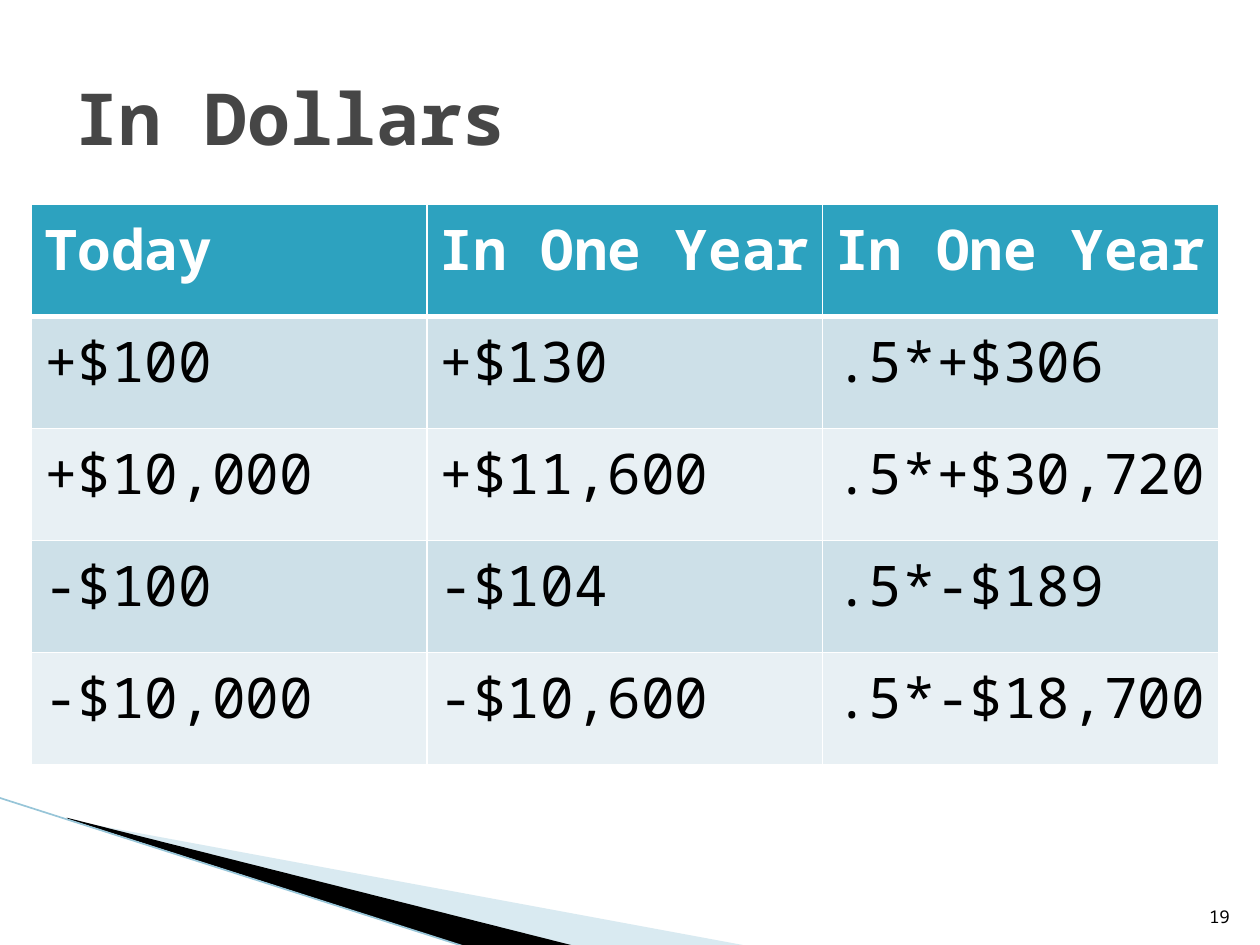
from dataclasses import dataclass

from lxml import etree
from pptx import Presentation
from pptx.dml.color import RGBColor
from pptx.enum import shapes, text
from pptx.oxml import ns
from pptx.util import Inches, Pt

FONT = "Noto Sans Mono"
COLORS = {
    "title": "464646",
    "text": "000000",
    "white": "FFFFFF",
    "header": "2DA2BF",
    "band_dark": "CDE0E8",
    "band_light": "E8F0F4",
    "wedge_pale": "A0CBDC",
    "wedge_black": "000000",
    "edge": "97C5D8",
}
ROWS = [
    ("Today", "In One Year", "In One Year"),
    ("+$100", "+$130", ".5*+$306"),
    ("+$10,000", "+$11,600", ".5*+$30,720"),
    ("-$100", "-$104", ".5*-$189"),
    ("-$10,000", "-$10,600", ".5*-$18,700"),
]
COLUMN_WIDTH = 3.14
ROW_HEIGHT = 0.89


@dataclass(frozen=True)
class Wedge:
    points: tuple[tuple[float, float], ...]
    color: str
    opacity: int = 100


WEDGES = [
    Wedge(((0.55, 6.51), (5.95, 7.51), (4.56, 7.51), (0.55, 6.5)), "wedge_pale", 40),
    Wedge(((0.53, 6.49), (4.57, 7.51), (3.72, 7.52), (0.54, 6.5)), "wedge_black"),
]


def rgb(name: str) -> RGBColor:
    return RGBColor.from_string(COLORS[name])


def write(frame, content: str, *, size: float, color: str = "text",
          bold: bool = False, align=text.PP_ALIGN.LEFT) -> None:
    paragraph = frame.paragraphs[0]
    paragraph.alignment = align
    run = paragraph.add_run()
    run.text = content
    run.font.name = FONT
    run.font.size = Pt(size)
    run.font.bold = bold
    run.font.color.rgb = rgb(color)


def add_wedge(slide, wedge: Wedge) -> None:
    start, *others = [(Inches(x), Inches(y)) for x, y in wedge.points]
    builder = slide.shapes.build_freeform(*start)
    builder.add_line_segments(others, close=True)
    shape = builder.convert_to_shape()
    shape.shadow.inherit = False
    shape.line.fill.background()
    shape.fill.solid()
    shape.fill.fore_color.rgb = rgb(wedge.color)
    if wedge.opacity < 100:
        color = shape.fill._xPr.find(".//" + ns.qn("a:srgbClr"))
        etree.SubElement(color, ns.qn("a:alpha"), val=str(wedge.opacity * 1000))


def add_edge(slide) -> None:
    line = slide.shapes.add_connector(
        shapes.MSO_CONNECTOR.STRAIGHT,
        Inches(-0.01), Inches(6.33), Inches(3.71), Inches(7.52))
    line.line.color.rgb = rgb("edge")
    line.line.width = Pt(0.95)
    etree.SubElement(line._element.spPr, ns.qn("a:effectLst"))


def set_borders(cell, **widths: float) -> None:
    """Draw white borders; keys are L, R, T and B in schema order."""
    properties = cell._tc.get_or_add_tcPr()
    for side, width in widths.items():
        line = etree.SubElement(properties, ns.qn(f"a:ln{side}"), w=str(Pt(width)))
        fill = etree.SubElement(line, ns.qn("a:solidFill"))
        etree.SubElement(fill, ns.qn("a:srgbClr"), val=COLORS["white"])


def add_payoff_table(slide) -> None:
    row_count, column_count = len(ROWS), len(ROWS[0])
    table = slide.shapes.add_table(
        row_count, column_count, Inches(0.25), Inches(1.62),
        Inches(COLUMN_WIDTH * column_count), Inches(ROW_HEIGHT * row_count)).table
    for column in table.columns:
        column.width = Inches(COLUMN_WIDTH)
    for i, values in enumerate(ROWS):
        table.rows[i].height = Inches(ROW_HEIGHT)
        is_header = i == 0
        band = "header" if is_header else "band_dark" if i % 2 else "band_light"
        for j, value in enumerate(values):
            cell = table.cell(i, j)
            set_borders(cell, L=1, R=1, T=3 if i == 1 else 1, B=3 if is_header else 1)
            cell.fill.solid()
            cell.fill.fore_color.rgb = rgb(band)
            write(cell.text_frame, value, size=32, bold=is_header,
                  color="white" if is_header else "text")


def add_title(slide) -> None:
    title = slide.shapes.title
    title.left, title.top = Inches(0.5), Inches(0.3)
    title.width, title.height = Inches(9), Inches(1.25)
    title.text_frame.vertical_anchor = text.MSO_ANCHOR.MIDDLE
    write(title.text_frame, "In Dollars", size=41, color="title", bold=True)


def add_slide_number(slide) -> None:
    box = slide.shapes.add_textbox(Inches(9.46), Inches(7.01), Inches(0.4), Inches(0.4))
    box.text_frame.word_wrap = True
    box.text_frame.vertical_anchor = text.MSO_ANCHOR.BOTTOM
    write(box.text_frame, "19", size=10, align=text.PP_ALIGN.RIGHT)


def main() -> None:
    presentation = Presentation()
    presentation.slide_width, presentation.slide_height = Inches(10), Inches(7.5)
    slide = presentation.slides.add_slide(presentation.slide_layouts[5])
    slide.background.fill.solid()
    slide.background.fill.fore_color.rgb = rgb("white")
    for wedge in WEDGES:
        add_wedge(slide, wedge)
    add_edge(slide)
    add_payoff_table(slide)
    add_slide_number(slide)
    add_title(slide)
    presentation.save("out.pptx")


if __name__ == "__main__":
    main()
